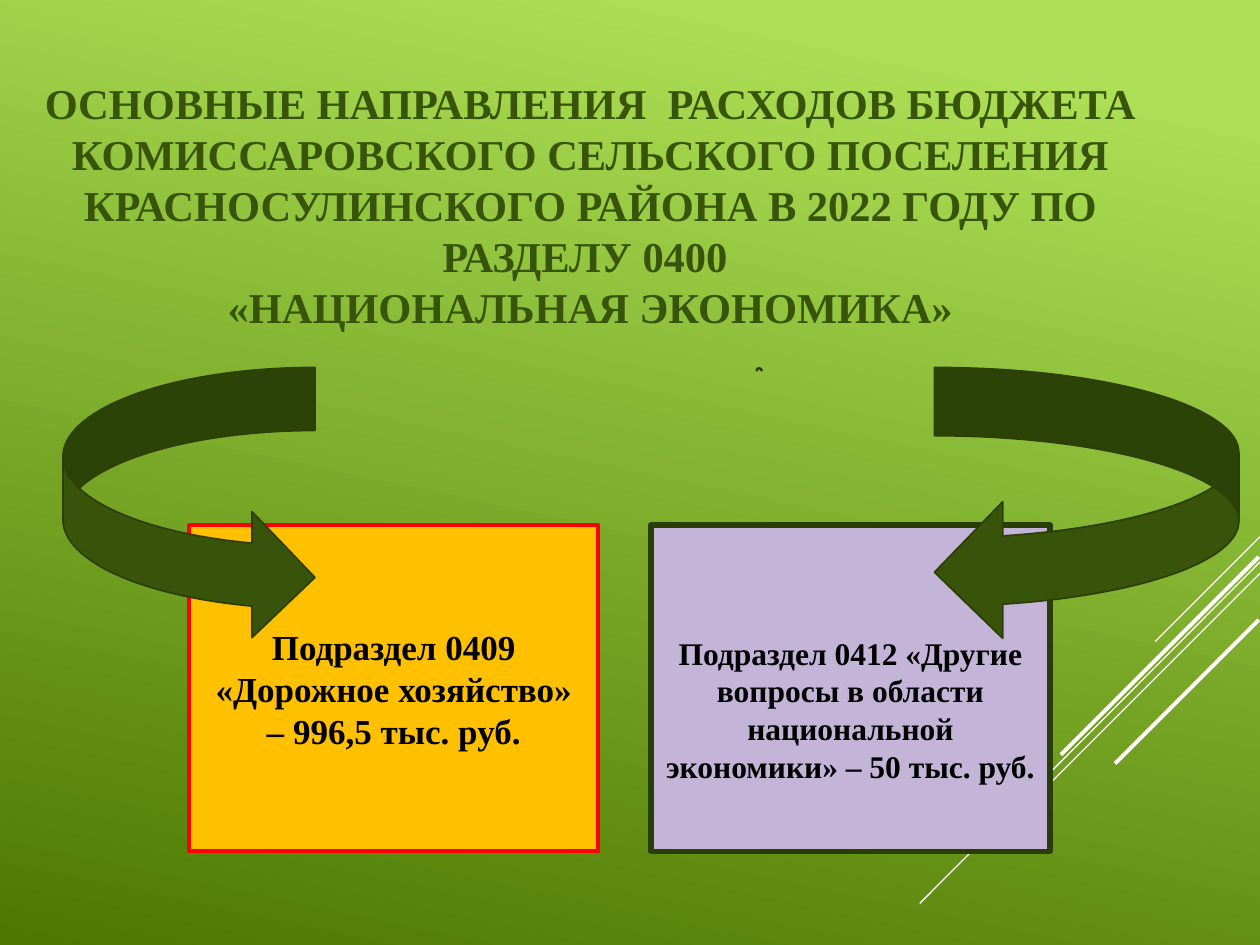
from pptx import Presentation
from pptx.dml.color import RGBColor
from pptx.enum.shapes import MSO_CONNECTOR, MSO_SHAPE
from pptx.enum.text import MSO_ANCHOR, PP_ALIGN
from pptx.oxml.ns import qn
from pptx.util import Pt

RECT = MSO_SHAPE.RECTANGLE
RIGHT = MSO_SHAPE.CURVED_RIGHT_ARROW
LEFT = MSO_SHAPE.CURVED_LEFT_ARROW
ROUND = MSO_SHAPE.CIRCULAR_ARROW
STRAIGHT = MSO_CONNECTOR.STRAIGHT
MIDDLE = MSO_ANCHOR.MIDDLE
CENTER = PP_ALIGN.CENTER

COLORS = {
    "light": "ACDF55", "dark": "4C7800", "white": "FFFFFF",
    "green": "38540A", "edge": "2E3E07", "frame": "293E06",
    "gold": "FFC000", "red": "FF0000", "lilac": "C4B4D7", "black": "000000",
}
FONT = {"name": "Times New Roman", "bold": True}
LEAD = 1.2

TITLE = (
    "ОСНОВНЫЕ НАПРАВЛЕНИЯ  РАСХОДОВ БЮДЖЕТА КОМИССАРОВСКОГО СЕЛЬСКОГО "
    "ПОСЕЛЕНИЯ КРАСНОСУЛИНСКОГО РАЙОНА В 2022 ГОДУ ПО РАЗДЕЛУ 0400 ",
    "«НАЦИОНАЛЬНАЯ ЭКОНОМИКА»",
)
ROADS = ("Подраздел 0409", "«Дорожное хозяйство»", "– 996,5 тыс. руб.")
OTHER = ("Подраздел 0412 «Другие вопросы в области национальной "
         "экономики» – 50 тыс. руб.",)

# Start x, y, end x, y, width
RAYS = (
    (720, 306.7, 660.2, 366.5, 0.75),
    (720, 321.1, 525.6, 516.2, 0.75),
    (720, 327.6, 596.2, 451.4, 0.75),
    (719.3, 318.2, 606.2, 431.3, 2.25),
    (719.3, 354.2, 637.2, 436.3, 2.25),
)


def color(key):
    return RGBColor.from_string(COLORS[key])


def points(*values):
    return [Pt(value) for value in values]


def paint(slide):
    fill = slide.background.fill
    fill.gradient()
    fill.gradient_angle = 258
    for stop, key, place in zip(fill.gradient_stops, ("light", "dark"), (0.1, 1)):
        stop.color.rgb = color(key)
        stop.position = place


def add_ray(slide, x1, y1, x2, y2, width):
    ray = slide.shapes.add_connector(STRAIGHT, *points(x1, y1, x2, y2))
    ray.line.color.rgb = color("white")
    ray.line.width = Pt(width)
    props = ray._element.spPr
    props.append(props.makeelement(qn("a:effectLst"), {}))


def add_form(slide, kind, place, fill, edge, width):
    form = slide.shapes.add_shape(kind, *points(*place))
    form.shadow.inherit = False
    form.fill.solid()
    form.fill.fore_color.rgb = color(fill)
    form.line.color.rgb = color(edge)
    form.line.width = Pt(width)
    return form


def write(shape, texts, size, tint, top=0):
    """Fill the shape with centred lines; top pushes them down."""
    frame = shape.text_frame
    layout = {"word_wrap": True, "vertical_anchor": MIDDLE,
              "margin_top": Pt(top), "margin_bottom": 0}
    for name, value in layout.items():
        setattr(frame, name, value)
    for index, text in enumerate(texts):
        para = frame.add_paragraph() if index else frame.paragraphs[0]
        para.alignment = CENTER
        para.line_spacing = Pt(size * LEAD)
        run = para.add_run()
        run.text = text
        for name, value in {**FONT, "size": Pt(size)}.items():
            setattr(run.font, name, value)
        run.font.color.rgb = color(tint)


def main():
    deck = Presentation()
    deck.slide_width, deck.slide_height = points(720, 540)
    slide = deck.slides.add_slide(deck.slide_layouts[6])
    paint(slide)
    for ray in RAYS:
        add_ray(slide, *ray)

    title = slide.shapes.add_textbox(*points(0, 42, 674.6, 150))
    write(title, TITLE, 24.3, "green")

    roads = add_form(slide, RECT, (108, 300, 234, 186.5), "gold", "red", 2.25)
    write(roads, ROADS, 20, "black")
    add_form(slide, RIGHT, (36, 210, 144, 156), "green", "edge", 1)

    other = add_form(slide, RECT, (372, 300, 228, 186.5), "lilac", "frame", 3)
    write(other, OTHER, 18, "black", top=24)
    add_form(slide, ROUND, (432, 210, 3.6, 3.6), "green", "edge", 1)
    add_form(slide, LEFT, (534, 210, 174, 156), "green", "edge", 1)

    deck.save("out.pptx")


if __name__ == "__main__":
    main()
